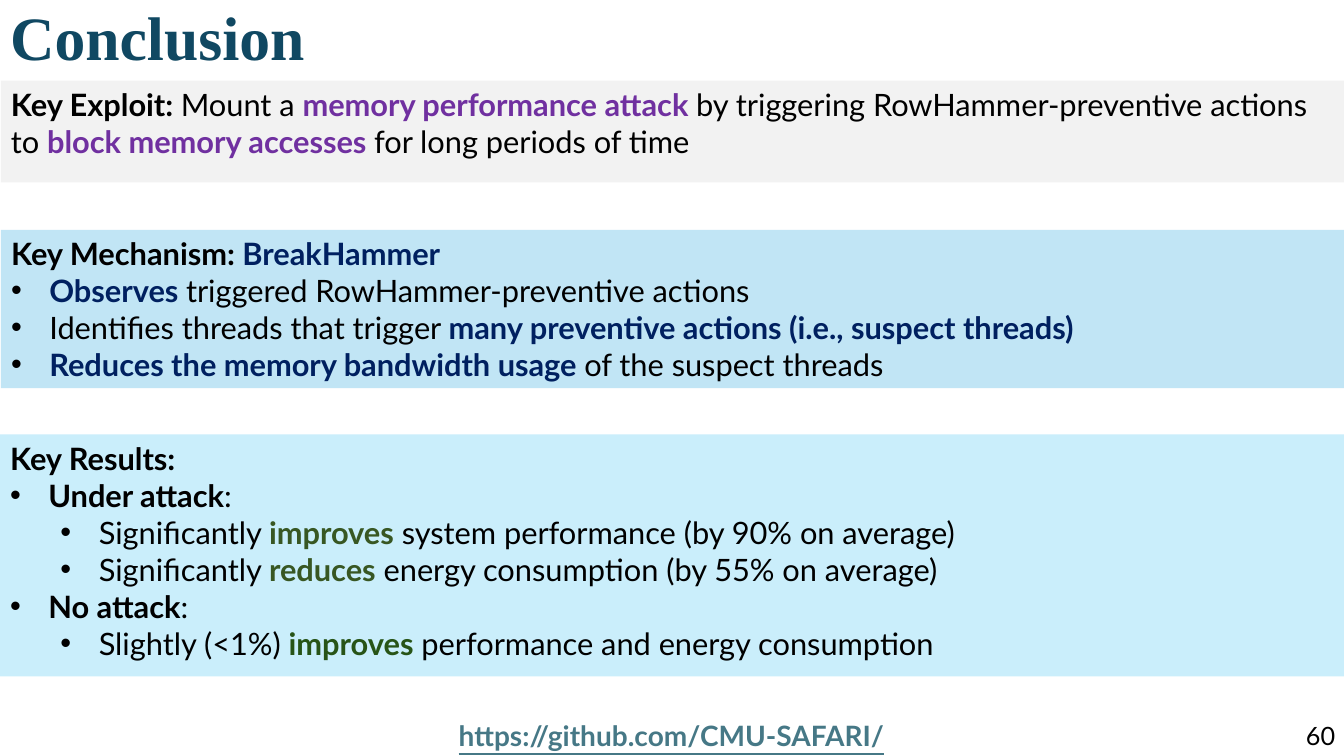
from dataclasses import dataclass

from lxml import etree
from pptx import Presentation
from pptx.dml.color import RGBColor
from pptx.enum.shapes import MSO_SHAPE as Shape
from pptx.enum.text import MSO_ANCHOR as Anchor, MSO_AUTO_SIZE as AutoSize, PP_ALIGN as Align
from pptx.oxml.ns import qn
from pptx.util import Inches, Pt


@dataclass(frozen=True)
class Theme:
    black: str = "000000"
    title: str = "104862"
    attack: str = "7030A0"
    mechanism: str = "002060"
    gain: str = "385723"
    gain_dark: str = "275417"
    link: str = "467886"
    exploit_fill: str = "F2F2F2"
    mechanism_fill: str = "C1E5F5"
    results_fill: str = "CAEEFB"
    body_font: str = "Lato"
    title_font: str = "Times New Roman"
    title_size: int = 44
    body_size: int = 22
    link_size: int = 20
    number_size: int = 18


def add_text(p, text, *, font, size, color, bold=False, underline=False):
    """Add one formatted run; a newline in the text becomes a line break."""
    for i, line in enumerate(text.split("\n")):
        if i:
            p.add_line_break()
        r = p.add_run()
        r.text = line
        r.font.name = font
        r.font.size = Pt(size)
        r.font.bold = bold
        r.font.underline = underline
        r.font.color.rgb = RGBColor.from_string(color)


class SlideBuilder:
    def __init__(self, slide, theme):
        self.slide = slide
        self.theme = theme

    def place(self, sp, box):
        sp.left, sp.top, sp.width, sp.height = (Inches(v) for v in box)

    def title(self, text, box):
        t, sp = self.theme, self.slide.shapes.title
        self.place(sp, box)
        tf = sp.text_frame
        tf.vertical_anchor = Anchor.MIDDLE
        tf.auto_size = AutoSize.NONE
        p = tf.paragraphs[0]
        p.alignment = Align.LEFT
        p.line_spacing = 0.9
        add_text(p, text, font=t.title_font, size=t.title_size, color=t.title, bold=True)

    def label(self, text, box, align, **fmt):
        sp = self.slide.shapes.add_textbox(*(Inches(v) for v in box))
        tf = sp.text_frame
        tf.word_wrap = True
        tf.auto_size = AutoSize.SHAPE_TO_FIT_TEXT
        p = tf.paragraphs[0]
        p.alignment = align
        add_text(p, text, font=self.theme.body_font, **fmt)

    def bullet(self, p, level):
        """Level 0 is an unbulleted heading; deeper levels hang by 0.38 in."""
        pPr = p._p.get_or_add_pPr()
        if not level:
            pPr.set("marL", "0")
            pPr.set("indent", "0")
            etree.SubElement(pPr, qn("a:buNone"))
            return
        p.level = level - 1
        pPr.set("marL", str(Inches(0.38 + 0.5 * (level - 1))))
        pPr.set("indent", str(Inches(-0.38)))
        clr = etree.SubElement(pPr, qn("a:buClr"))
        etree.SubElement(clr, qn("a:srgbClr"), val=self.theme.black)
        etree.SubElement(pPr, qn("a:buFont"), typeface="Arial")
        etree.SubElement(pPr, qn("a:buChar"), char="•")

    def panel(self, box, fill, lines, sp=None):
        """Fill a placeholder, or a new rectangle, with (level, runs) lines.

        A run is plain text, or a (text, colour) pair for bold emphasis.
        """
        t = self.theme
        if sp is None:
            sp = self.slide.shapes.add_shape(Shape.RECTANGLE, 0, 0, 0, 0)
            sp.shadow.inherit = False
        self.place(sp, box)
        sp.fill.solid()
        sp.fill.fore_color.rgb = RGBColor.from_string(fill)
        sp.line.fill.background()
        tf = sp.text_frame
        tf.word_wrap = True
        tf.auto_size = AutoSize.NONE
        tf.vertical_anchor = Anchor.TOP
        for i, (level, runs) in enumerate(lines):
            p = tf.add_paragraph() if i else tf.paragraphs[0]
            p.alignment = Align.LEFT
            p.space_before = Pt(0)
            self.bullet(p, level)
            for run in runs:
                bold = isinstance(run, tuple)
                text, color = run if bold else (run, t.black)
                add_text(p, text, font=t.body_font, size=t.body_size, color=color, bold=bold)


def main():
    t = Theme()
    prs = Presentation()
    prs.slide_width, prs.slide_height = Inches(13.33), Inches(7.5)
    slide = prs.slides.add_slide(prs.slide_layouts[3])
    b = SlideBuilder(slide, t)
    mechanism, results = slide.placeholders[1], slide.placeholders[2]

    # Title
    b.title("Conclusion", (0, 0, 13.33, 0.8))

    # Key results
    b.panel((0, 4.31, 13.36, 2.4), t.results_fill, [
        (0, [("Key Results:", t.black)]),
        (1, [("Under attack", t.black), ":"]),
        (2, ["Significantly ", ("improves", t.gain), " system performance (by 90% on average)"]),
        (2, ["Significantly ", ("reduces", t.gain), " energy consumption (by 55% on average)"]),
        (1, [("No attack", t.black), ":"]),
        (2, ["Slightly (<1%) ", ("improves", t.gain_dark), " performance and energy consumption"]),
    ], results)

    # Key mechanism
    b.panel((0.01, 2.28, 13.33, 1.57), t.mechanism_fill, [
        (0, [("Key Mechanism: ", t.black), ("BreakHammer", t.mechanism)]),
        (1, [("Observes ", t.mechanism), "triggered RowHammer-preventive actions"]),
        (1, ["Identifies threads that trigger ",
             ("many preventive actions (i.e., suspect threads)", t.mechanism)]),
        (1, [("Reduces the memory bandwidth usage ", t.mechanism), "of the suspect threads"]),
    ], mechanism)

    # Key exploit
    b.panel((0.01, 0.8, 13.33, 1.01), t.exploit_fill, [
        (0, [("Key Exploit: ", t.black), "Mount a ", ("memory performance attack ", t.attack),
             "by triggering RowHammer-preventive actions \nto ",
             ("block memory accesses ", t.attack), "for long periods of time"]),
    ])

    # Footer: project link, slide number
    b.label("https://github.com/CMU-SAFARI/", (3.68, 7.08, 5.96, 0.44), Align.CENTER,
            size=t.link_size, color=t.link, bold=True, underline=True)
    b.label("60", (12.59, 7.1, 0.75, 0.4), Align.RIGHT, size=t.number_size, color=t.black)

    prs.save("out.pptx")


if __name__ == "__main__":
    main()
